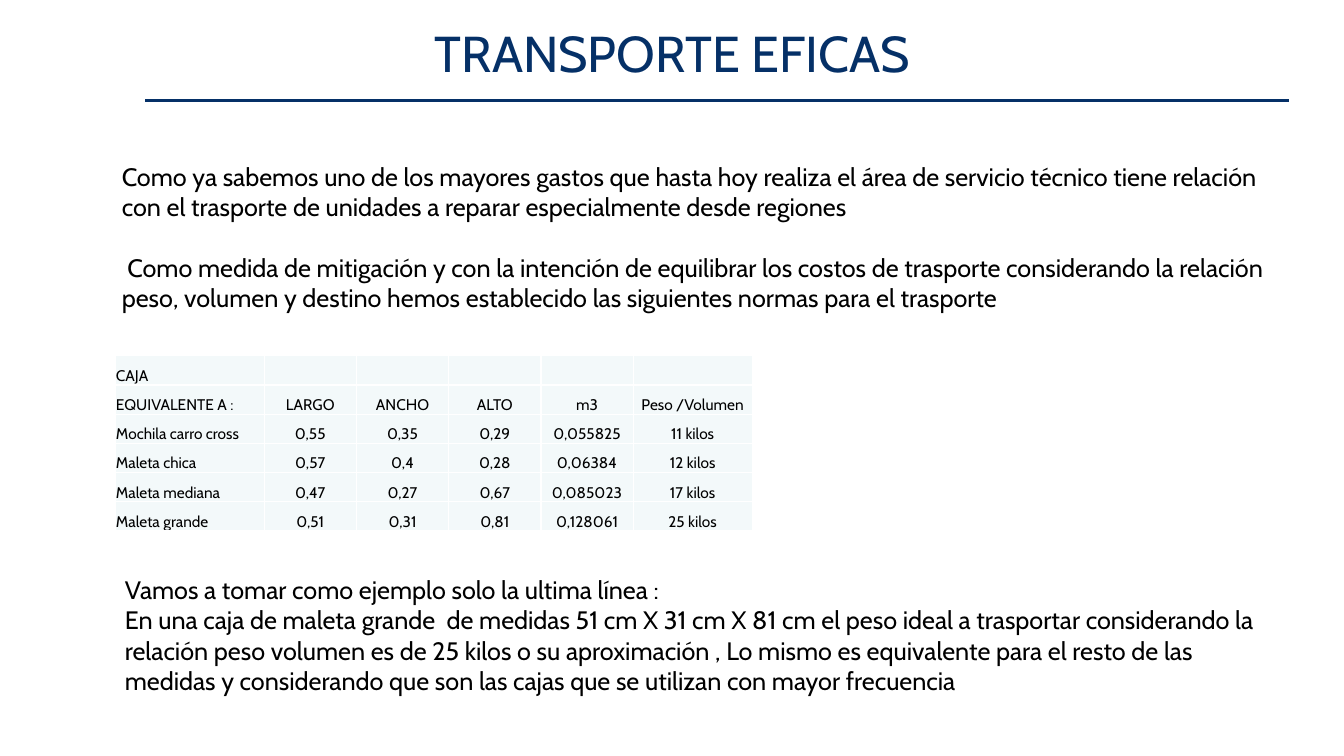
"""Build the slide on efficient transport with its box size table."""
from dataclasses import dataclass

from lxml import etree
from pptx import Presentation
from pptx.dml.color import RGBColor
from pptx.enum.shapes import MSO_CONNECTOR
from pptx.enum.text import MSO_ANCHOR, PP_ALIGN
from pptx.oxml.ns import qn
from pptx.util import Inches, Pt

LEFT, CENTER = PP_ALIGN.LEFT, PP_ALIGN.CENTER
BOTTOM = MSO_ANCHOR.BOTTOM
STRAIGHT = MSO_CONNECTOR.STRAIGHT


@dataclass(frozen=True)
class Theme:
    font: str = "Cabin"
    navy: str = "053067"
    black: str = "000000"
    white: str = "FFFFFF"
    cell: str = "F3F9FA"
    title_size: float = 36
    body_size: float = 18
    table_size: float = 11
    rule_width: float = 2.25
    border_width: float = 1


THEME = Theme()


def write_text(frame, *texts, size=THEME.body_size, color=THEME.black, align=LEFT, gap=0):
    """Fill a text frame with one paragraph per text."""
    frame.word_wrap = True
    for index, text in enumerate(texts):
        paragraph = frame.add_paragraph() if index else frame.paragraphs[0]
        paragraph.alignment = align
        if index and gap:
            paragraph.space_before = Pt(gap)
        if not text:
            paragraph._p.get_or_add_endParaRPr().set("sz", str(size * 100))
            continue
        run = paragraph.add_run()
        run.text = text
        run.font.name = THEME.font
        run.font.size = Pt(size)
        run.font.color.rgb = RGBColor.from_string(color)


def add_borders(cell):
    """Draw the four cell borders, placed ahead of the fill."""
    properties = cell._tc.get_or_add_tcPr()
    for index, side in enumerate(("lnL", "lnR", "lnT", "lnB")):
        border = etree.Element(qn(f"a:{side}"), w=str(Pt(THEME.border_width)))
        fill = etree.SubElement(border, qn("a:solidFill"))
        etree.SubElement(fill, qn("a:srgbClr"), val=THEME.white)
        properties.insert(index, border)


presentation = Presentation()
presentation.slide_width = Inches(13.33)
presentation.slide_height = Inches(7.5)
slide = presentation.slides.add_slide(presentation.slide_layouts[6])

title_rule = slide.shapes.add_connector(STRAIGHT, Inches(1.44), Inches(1), Inches(12.78), Inches(1))
title_rule.line.color.rgb = RGBColor.from_string(THEME.navy)
title_rule.line.width = Pt(THEME.rule_width)
etree.SubElement(title_rule._element.spPr, qn("a:effectLst"))

title = slide.shapes.add_textbox(Inches(0.67), Inches(0.17), Inches(12), Inches(0.83))
write_text(title.text_frame, "TRANSPORTE EFICAS", size=THEME.title_size, color=THEME.navy, align=CENTER)

introduction = slide.shapes.add_textbox(Inches(1.11), Inches(1.55), Inches(11.56), Inches(1.65))
write_text(
    introduction.text_frame,
    "Como ya sabemos uno de los mayores gastos que hasta hoy realiza el área de servicio técnico "
    "tiene relación con el trasporte de unidades a reparar especialmente desde regiones",
    " Como medida de mitigación y con la intención de equilibrar los costos de trasporte considerando "
    "la relación peso, volumen y destino hemos establecido las siguientes normas para el trasporte",
    gap=21.6,
)

box_rows = [
    ("CAJA", "", "", "", "", ""),
    ("EQUIVALENTE A :", "LARGO", "ANCHO", "ALTO", "m3", "Peso /Volumen"),
    ("Mochila carro cross", "0,55", "0,35", "0,29", "0,055825", "11 kilos"),
    ("Maleta chica", "0,57", "0,4", "0,28", "0,06384", "12 kilos"),
    ("Maleta mediana", "0,47", "0,27", "0,67", "0,085023", "17 kilos"),
    ("Maleta grande", "0,51", "0,31", "0,81", "0,128061", "25 kilos"),
]
column_widths = [1.48] + [0.915] * 4 + [1.18]
row_height = 0.29
table = slide.shapes.add_table(
    len(box_rows), len(column_widths), Inches(1.14), Inches(3.53),
    Inches(sum(column_widths)), Inches(row_height * len(box_rows)),
).table
table.first_row = False
table.horz_banding = False
for column, width in zip(table.columns, column_widths):
    column.width = Inches(width)
for row_index, values in enumerate(box_rows):
    table.rows[row_index].height = Inches(row_height)
    for column_index, value in enumerate(values):
        cell = table.cell(row_index, column_index)
        cell.margin_left = cell.margin_right = cell.margin_top = Inches(0.01)
        cell.margin_bottom = 0
        cell.vertical_anchor = BOTTOM
        cell.fill.solid()
        cell.fill.fore_color.rgb = RGBColor.from_string(THEME.cell)
        add_borders(cell)
        write_text(cell.text_frame, value, size=THEME.table_size, align=CENTER if column_index else LEFT)

example = slide.shapes.add_textbox(Inches(1.14), Inches(5.65), Inches(11.53), Inches(1.35))
write_text(
    example.text_frame,
    "Vamos a tomar como ejemplo solo la ultima línea :",
    "En una caja de maleta grande  de medidas 51 cm X 31 cm X 81 cm el peso ideal a trasportar "
    "considerando la relación peso volumen es de 25 kilos o su aproximación , Lo mismo es equivalente "
    "para el resto de las medidas y considerando que son las cajas que se utilizan con mayor frecuencia",
)

presentation.save("out.pptx")
